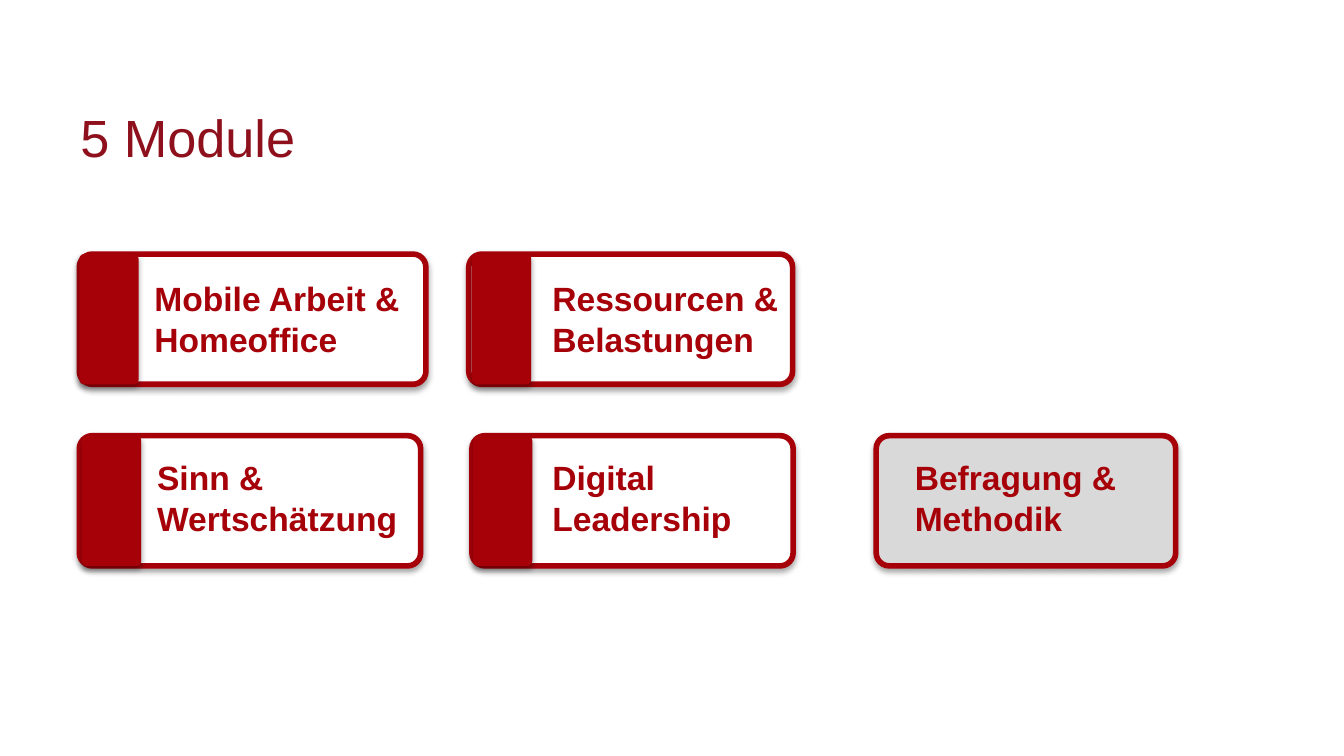
"""Build the slide with five module cards."""
import pptx
import pptx.dml.color
import pptx.enum.shapes
import pptx.enum.text
import pptx.oxml
import pptx.oxml.ns
import pptx.util
from pptx.util import Cm

RED, WHITE, GRAY = "A60009", "FFFFFF", "D9D9D9"
CARD_HEIGHT, TAB_WIDTH, TEXT_HEIGHT = 2.46, 1.12, 1.8
SHADOW = (
    f'<a:outerShdw {pptx.oxml.ns.nsdecls("a")} blurRad="40000" dist="23000" '
    'dir="5400000" rotWithShape="0"><a:srgbClr val="000000">'
    '<a:alpha val="35000"/></a:srgbClr></a:outerShdw>'
)


def color(value):
    return pptx.dml.color.RGBColor.from_string(value)


def add_card(left, top, width, fill, radius):
    shape = slide.shapes.add_shape(
        pptx.enum.shapes.MSO_SHAPE.ROUNDED_RECTANGLE,
        Cm(left), Cm(top), Cm(width), Cm(CARD_HEIGHT),
    )
    shape.adjustments[0] = radius
    shape.fill.solid()
    shape.fill.fore_color.rgb = color(fill)
    shape.shadow.inherit = False
    effects = shape._element.spPr.find(pptx.oxml.ns.qn("a:effectLst"))
    effects.append(pptx.oxml.parse_xml(SHADOW))
    return shape


presentation = pptx.Presentation()
presentation.slide_width = Cm(25.4)
presentation.slide_height = Cm(14.28)
slide = presentation.slides.add_slide(presentation.slide_layouts[6])

title = slide.shapes.add_textbox(Cm(1.27), Cm(1.7), Cm(16.97), Cm(2.9))
title.text_frame.word_wrap = True
title.text_frame.margin_top = Cm(0.28)
paragraph = title.text_frame.paragraphs[0]
paragraph.text = "5 Module"
paragraph.font.name = "Arial"
paragraph.font.size = pptx.util.Pt(28)
paragraph.font.color.rgb = color("8E101C")

rows = [(4.8, 5.13), (8.23, 8.51)]
modules = [
    ("Mobile Arbeit & Homeoffice", 0, 1.5, 6.55, WHITE, 1.5, 2.67, 5.31),
    ("Ressourcen & Belastungen", 0, 8.86, 6.12, WHITE, 8.92, 10.19, 4.8),
    ("Sinn & Wertschätzung", 1, 1.5, 6.45, WHITE, 1.55, 2.72, 5.26),
    ("Digital Leadership", 1, 8.92, 6.07, WHITE, 8.94, 10.19, 4.5),
    ("Befragung & Methodik", 1, 16.56, 5.66, GRAY, None, 17.04, 4.88),
]
for label, row, left, width, fill, tab_left, text_left, text_width in modules:
    top, text_top = rows[row]
    card = add_card(left, top, width, fill, 0.1)
    card.line.color.rgb = color(RED)
    card.line.width = pptx.util.Pt(3)

    if tab_left is not None:
        tab = add_card(tab_left, top, TAB_WIDTH, RED, 0.08)
        tab.line.fill.background()

    textbox = slide.shapes.add_textbox(
        Cm(text_left), Cm(text_top), Cm(text_width), Cm(TEXT_HEIGHT)
    )
    textbox.text_frame.word_wrap = True
    textbox.text_frame.auto_size = pptx.enum.text.MSO_AUTO_SIZE.SHAPE_TO_FIT_TEXT
    paragraph = textbox.text_frame.paragraphs[0]
    paragraph.text = label
    paragraph.font.name = "Arial"
    paragraph.font.size = pptx.util.Pt(18)
    paragraph.font.bold = True
    paragraph.font.color.rgb = color(RED)

presentation.save("out.pptx")
